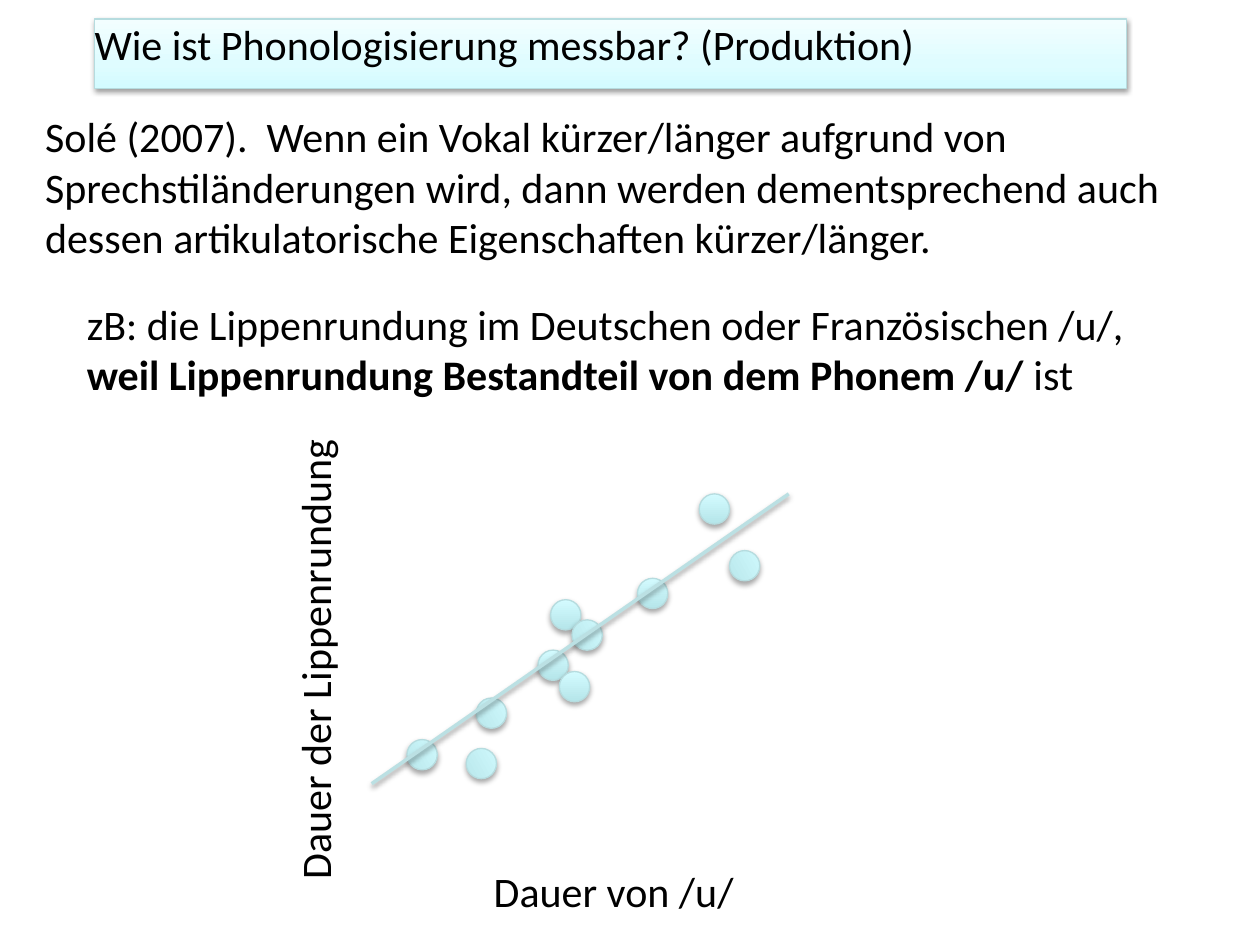
"""Builds the slide on measuring phonologisation in speech production."""
from copy import deepcopy
from lxml import etree
from pptx import Presentation
from pptx.dml.color import RGBColor
from pptx.enum.shapes import MSO_CONNECTOR, MSO_SHAPE
from pptx.enum.text import MSO_ANCHOR, MSO_AUTO_SIZE, PP_ALIGN
from pptx.oxml.ns import qn
from pptx.util import Inches, Pt

LINE = MSO_CONNECTOR.STRAIGHT
OVAL = MSO_SHAPE.OVAL
TOP, LEFT = MSO_ANCHOR.TOP, PP_ALIGN.LEFT
FIT, NO_FIT = MSO_AUTO_SIZE.SHAPE_TO_FIT_TEXT, MSO_AUTO_SIZE.NONE

THEME = {
    "font": "Calibri",
    "size": Pt(24),
    "text": RGBColor.from_string("000000"),
    "edge": RGBColor.from_string("B6DCDF"),
    "trend": RGBColor.from_string("BBE0E3"),
    "title_fill": [(0, "D3FBFF"), (0.35, "DFFCFF"), (1, "F2FEFF")],
    "dot_fill": [(0, "B5E5E9"), (1, "D3FBFF")],
}


def finish(s, stops, alpha, dist):
    """Give a shape its gradient, outline and soft shadow, or a line its shadow."""
    sp = s._element.spPr
    if stops:
        s.fill.gradient()
        s.fill.gradient_angle = 90
        gs = sp.find(".//" + qn("a:gsLst"))
        for _ in stops[2:]:
            gs.append(deepcopy(gs[-1]))
        for stop, (pos, color) in zip(s.fill.gradient_stops, stops):
            stop.position = pos
            stop.color.rgb = RGBColor.from_string(color)
        s.line.color.rgb = THEME["edge"]
        s.line.width = Pt(0.75)
    effects = etree.SubElement(sp, qn("a:effectLst"))
    shadow = etree.SubElement(effects, qn("a:outerShdw"), blurRad=str(Pt(3.1)),
                              dist=str(Pt(dist)), dir="5400000", rotWithShape="0")
    color = etree.SubElement(shadow, qn("a:srgbClr"), val="000000")
    etree.SubElement(color, qn("a:alpha"), val=str(alpha * 1000))


def write(tf, runs):
    """Write one paragraph from (text, bold) pairs."""
    p = tf.paragraphs[0]
    p.alignment = LEFT
    p.font.name, p.font.size = THEME["font"], THEME["size"]
    p.font.color.rgb = THEME["text"]
    for text, bold in runs:
        r = p.add_run()
        r.text = text
        if bold:
            r.font.bold = True


prs = Presentation()
prs.slide_width, prs.slide_height = Inches(10), Inches(7.5)
slide = prs.slides.add_slide(prs.slide_layouts[5])

title = slide.shapes.title
title.left, title.top = Inches(0.75), Inches(0.15)
title.width, title.height = Inches(8.19), Inches(0.55)
tf = title.text_frame
tf.auto_size, tf.vertical_anchor = NO_FIT, TOP
tf.margin_left = tf.margin_top = tf.margin_bottom = 0
tf.margin_right = Inches(0.04)
write(tf, [("Wie ist Phonologisierung messbar? (Produktion)", False)])
finish(title, THEME["title_fill"], 38, 1.6)

texts = [
    (0.26, 0.83, 9.47, 1.31, 0, True,
     [("Solé (2007).  Wenn ein Vokal kürzer/länger aufgrund von "
       "Sprechstiländerungen wird, dann werden dementsprechend auch "
       "dessen artikulatorische Eigenschaften kürzer/länger.", False)]),
    (0.59, 2.32, 8.58, 0.91, 0, True,
     [("zB: die Lippenrundung im Deutschen oder Französischen /u/, ", False),
      ("weil Lippenrundung Bestandteil von dem Phonem /u/ ", True),
      ("ist", False)]),
    (3.82, 6.82, 2.12, 0.5, 0, False, [("Dauer von /u/", False)]),
    (0.63, 4.96, 3.73, 0.5, 270, False, [("Dauer der Lippenrundung", False)]),
]
for x, y, w, h, rotation, wrap, runs in texts:
    s = slide.shapes.add_textbox(Inches(x), Inches(y), Inches(w), Inches(h))
    s.rotation = rotation
    s.text_frame.word_wrap, s.text_frame.auto_size = wrap, FIT
    write(s.text_frame, runs)

dots = [
    (4.37, 4.76, 0), (4.27, 5.16, 0), (4.54, 4.92, 60.6), (3.78, 5.54, 60.6),
    (5.06, 4.59, 0), (4.44, 5.33, 0), (5.79, 4.37, 60.6), (3.7, 5.94, 60.6),
    (3.23, 5.87, 60.6), (5.55, 3.92, 0),
]
for x, y, rotation in dots:
    s = slide.shapes.add_shape(OVAL, Inches(x), Inches(y), Inches(0.24), Inches(0.24))
    s.rotation = rotation
    finish(s, THEME["dot_fill"], 35, 1.8)

trend = slide.shapes.add_connector(LINE, Inches(2.95), Inches(6.22),
                                   Inches(6.26), Inches(3.92))
trend.line.color.rgb, trend.line.width = THEME["trend"], Pt(2)
finish(trend, None, 38, 1.6)

prs.save("out.pptx")
